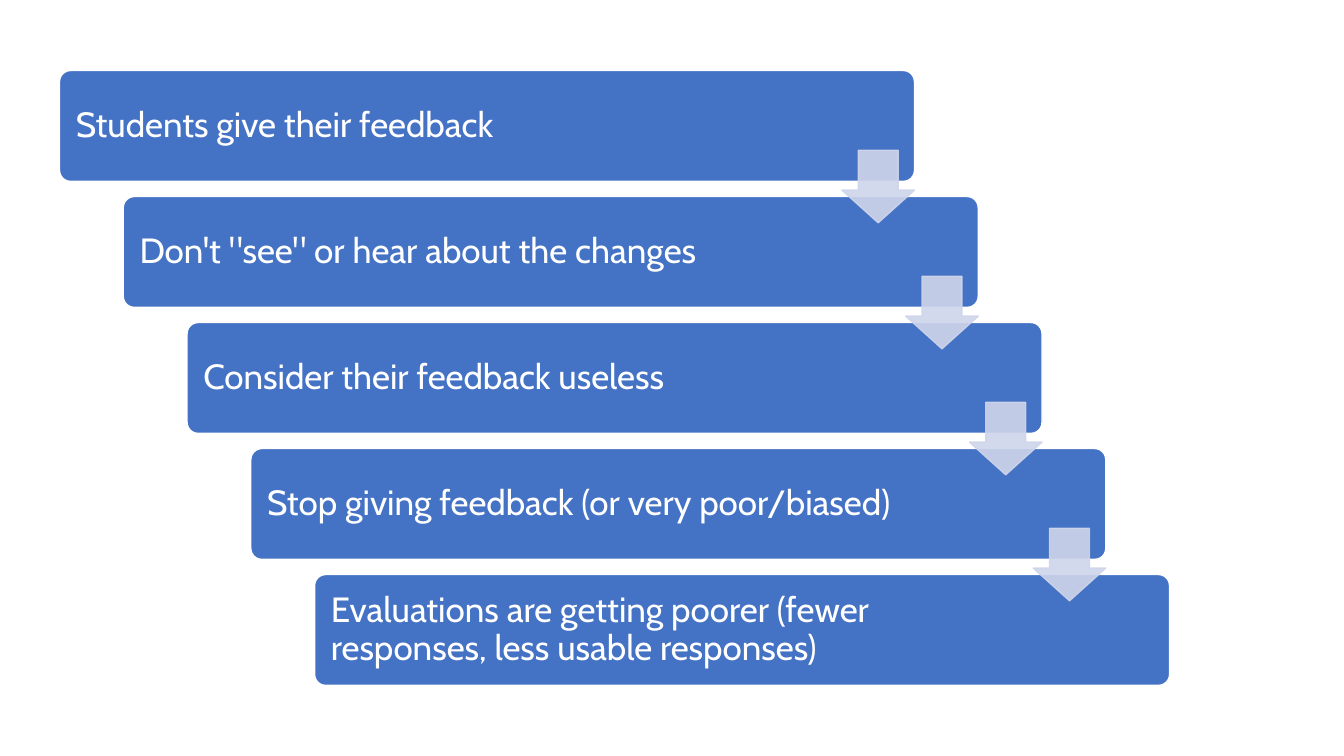
from lxml.etree import SubElement
from pptx import Presentation
from pptx.dml.color import RGBColor
from pptx.enum.shapes import MSO_SHAPE
from pptx.enum.text import MSO_ANCHOR, PP_ALIGN
from pptx.oxml.ns import qn
from pptx.util import Inches, Pt

COLORS = {"step": "4472C4", "arrow": "CFD5EA", "white": "FFFFFF"}
STEPS = [
    "Students give their feedback",
    "Don't \"see\" or hear about the changes",
    "Consider their feedback useless",
    "Stop giving feedback (or very poor/biased)",
    "Evaluations are getting poorer (fewer responses, less usable responses)",
]
STEP_WIDTH, STEP_HEIGHT = 8.48, 1.1
ARROW_SIZE, ARROW_DROP = 0.72, 0.79


def add_block(slide, preset, box, fill, line, adjustments):
    """Add a flat preset shape with a 1 pt outline."""
    block = slide.shapes.add_shape(preset, *(Inches(length) for length in box))
    for index, value in enumerate(adjustments):
        block.adjustments[index] = value
    block.shadow.inherit = False
    block.fill.solid()
    block.fill.fore_color.rgb = RGBColor.from_string(COLORS[fill])
    block.line.color.rgb = RGBColor.from_string(COLORS[line])
    block.line.width = Pt(1)
    return block


def add_step(slide, left, top, wording):
    """Add one step, keeping its right end free for the arrow."""
    step = add_block(slide, MSO_SHAPE.ROUNDED_RECTANGLE,
                     (left, top, STEP_WIDTH, STEP_HEIGHT), "step", "white", [0.1])
    frame = step.text_frame
    frame.word_wrap = True
    frame.vertical_anchor = MSO_ANCHOR.MIDDLE
    frame.margin_left, frame.margin_right = Inches(0.13), Inches(1.48)
    frame.margin_top = frame.margin_bottom = Inches(0.13)
    paragraph = frame.paragraphs[0]
    paragraph.alignment = PP_ALIGN.LEFT
    paragraph.line_spacing = 0.9
    run = paragraph.add_run()
    run.text = wording
    run.font.name = "Cabin"
    run.font.size = Pt(25)
    run.font.color.rgb = RGBColor.from_string(COLORS["white"])


def add_arrow(slide, left, top):
    """Add a slightly transparent arrow from the step at left, top to the next."""
    box = (left + STEP_WIDTH - ARROW_SIZE, top + ARROW_DROP, ARROW_SIZE, ARROW_SIZE)
    # The preset's first adjustment is the shaft width, the second the head length
    arrow = add_block(slide, MSO_SHAPE.DOWN_ARROW, box, "arrow", "arrow", [0.55, 0.45])
    for color in arrow.element.spPr.iter(qn("a:srgbClr")):
        SubElement(color, qn("a:alpha"), val="90000")


def add_staircase(slide, left, top, width, height):
    """Spread the steps diagonally over the box, then lay arrows on top."""
    gaps = len(STEPS) - 1
    shift_x = (width - STEP_WIDTH) / gaps
    shift_y = (height - STEP_HEIGHT) / gaps
    corners = [(left + i * shift_x, top + i * shift_y) for i in range(len(STEPS))]
    for corner, wording in zip(corners, STEPS):
        add_step(slide, *corner, wording)
    for corner in corners[:-1]:
        add_arrow(slide, *corner)


def main():
    presentation = Presentation()
    presentation.slide_width = Inches(13.33)
    presentation.slide_height = Inches(7.5)
    slide = presentation.slides.add_slide(presentation.slide_layouts[6])
    add_staircase(slide, 0.59, 0.7, 11.01, 6.1)
    presentation.save("out.pptx")


if __name__ == "__main__":
    main()
